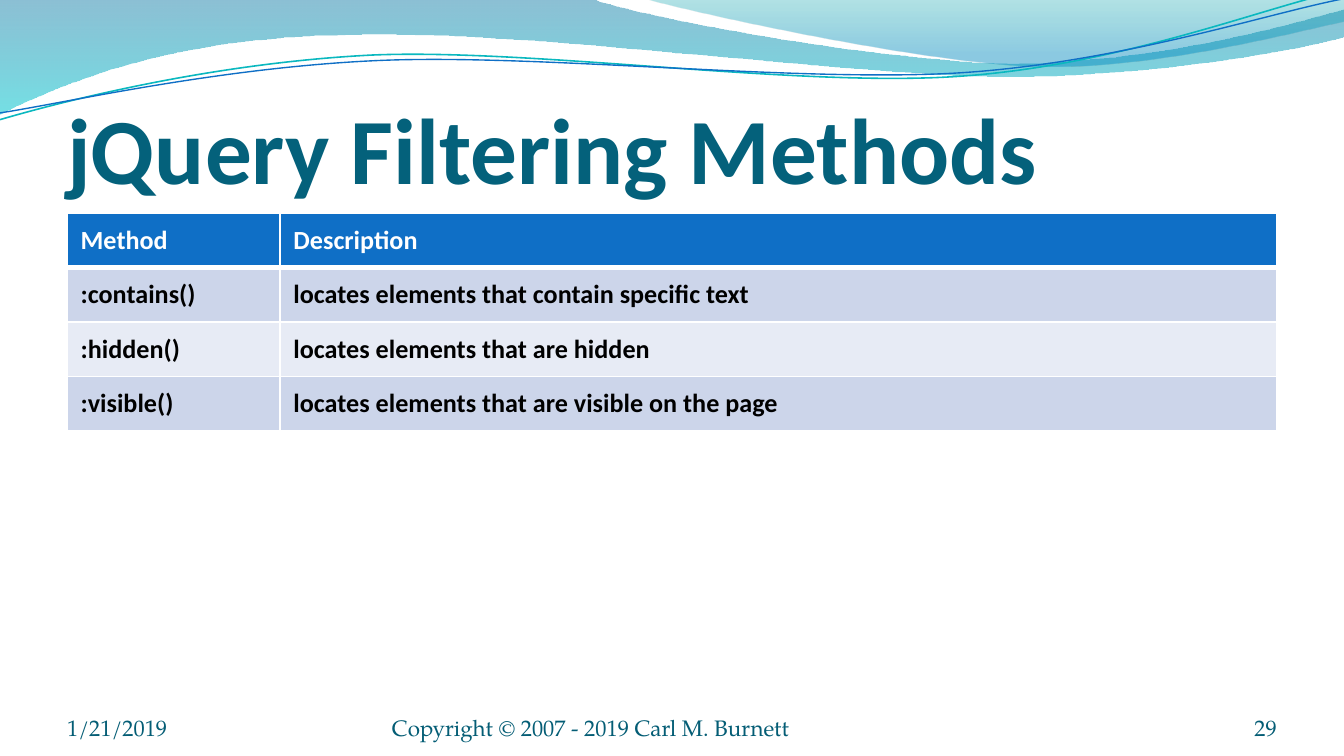
"""Build the jQuery filtering methods slide."""
from lxml import etree
from pptx import Presentation
from pptx.dml.color import RGBColor
from pptx.enum import text
from pptx.oxml import ns
from pptx.util import Pt

COLORS = {
    "title": "04617B", "footer": "045D75", "header": "0F6FC6",
    "odd": "CCD5EA", "even": "E7EBF5", "white": "FFFFFF", "black": "000000",
    "band_top": "0074A1", "band_end": "00C6CF",
    "crest_top": "00A1A9", "crest_end": "008BBF", "teal": "0AB8BF",
}


def write(tf, content, size=14, font="Calibri", color="black", bold=False,
          align="LEFT", anchor="BOTTOM"):
    tf.word_wrap = True
    tf.vertical_anchor = getattr(text.MSO_ANCHOR, anchor)
    p = tf.paragraphs[0]
    p.alignment = getattr(text.PP_ALIGN, align)
    r = p.add_run()
    r.text = content
    r.font.size, r.font.name, r.font.bold = Pt(size), font, bold
    r.font.color.rgb = RGBColor.from_string(COLORS[color])


def draw_wave(slide, start, segments, closed):
    x0, y0 = [round(v * 100) for v in start]
    segments = [[round(v * 100) for v in seg] for seg in segments]
    fb = slide.shapes.build_freeform(x0, y0, scale=Pt(0.01))
    fb.add_line_segments([seg[-2:] for seg in segments], close=closed)
    s = fb.convert_to_shape()
    s.shadow.inherit = False
    origin = next(s._element.iter(ns.qn("a:moveTo")))[0]
    dx, dy = int(origin.get("x")) - x0, int(origin.get("y")) - y0
    for step, seg in zip(list(s._element.iter(ns.qn("a:lnTo"))), segments):
        if len(seg) == 6:
            curve = etree.Element(ns.qn("a:cubicBezTo"))
            for x, y in zip(seg[::2], seg[1::2]):
                etree.SubElement(curve, ns.qn("a:pt"), x=str(x + dx), y=str(y + dy))
            step.getparent().replace(step, curve)
    return s


prs = Presentation()
prs.slide_width, prs.slide_height = Pt(720), Pt(405)
slide = prs.slides.add_slide(prs.slide_layouts[6])

bands = [
    ((0, 0), [(316.8, -0.7), (342.7, 9.4, 478.1, 33.8, 545.8, 33.8),
              (614.2, 33.8, 689.8, 13.7, 720, 5), (720.7, 19.4),
              (707.8, 23.8, 626.4, 41, 537.1, 41),
              (447.8, 40.3, 275, 15.1, 185, 18.7),
              (92.9, 19.4, 33.1, 44.6, -0.7, 61.2), (0, 0)],
     [("band_top", 0, 45), ("band_end", 1, 55)]),
    ((344.9, -0.7), [(366.5, 5.8, 491, 33.1, 553.7, 35.3),
                     (616.3, 37.4, 691.9, 17.3, 720, 11.5),
                     (720, 0), (344.9, -0.7)],
     [("crest_top", 0, 30), ("crest_end", 0.8, 45)]),
]
for start, segments, stops in bands:
    s = draw_wave(slide, start, segments, True)
    s.line.fill.background()
    s.fill.gradient()
    s.fill.gradient_angle = 270
    for stop, (color, position, _) in zip(s.fill.gradient_stops, stops):
        stop.position = position
        stop.color.rgb = RGBColor.from_string(COLORS[color])
    for clr, (_, _, opacity) in zip(s._element.spPr.iter(ns.qn("a:srgbClr")), stops):
        etree.SubElement(clr, ns.qn("a:alpha"), val=str(opacity * 1000))

lines = [
    ((0, 64.1), [(34.6, 54, 113.8, 33.8, 199.4, 29.5),
                 (285.1, 25.9, 426.2, 46.8, 512.6, 41),
                 (599.8, 35.3, 676.1, 4.3, 718.6, -5)], "teal", 0.85),
    ((0, 60.5), [(33.8, 55.4, 118.1, 36, 203.8, 32.4),
                 (290.2, 28.8, 429.8, 44.6, 516.2, 38.9),
                 (601.9, 33.1, 679, 7.2, 720, -0.7)], "header", 0.75),
]
for start, segments, color, width in lines:
    s = draw_wave(slide, start, segments, False)
    s.fill.background()
    s.line.color.rgb = RGBColor.from_string(COLORS[color])
    s.line.width = Pt(width)

footer = dict(size=12, font="TeX Gyre Pagella", color="footer")
boxes = [
    ("jQuery Filtering Methods", 36, 41.5, 648, 67.5,
     dict(size=50, color="title", bold=True)),
    ("1/21/2019", 36, 375.4, 168, 21.6, footer),
    ("Copyright © 2007 - 2019 Carl M. Burnett", 210, 375.4, 264, 21.6, footer),
    ("29", 624, 375.4, 60, 21.6, dict(footer, align="RIGHT")),
]
for content, x, y, w, h, style in boxes:
    tf = slide.shapes.add_textbox(Pt(x), Pt(y), Pt(w), Pt(h)).text_frame
    tf.margin_left = tf.margin_top = tf.margin_right = tf.margin_bottom = 0
    write(tf, content, **style)

rows = [
    ("Method", "Description"),
    (":contains()", "locates elements that contain specific text"),
    (":hidden()", "locates elements that are hidden"),
    (":visible()", "locates elements that are visible on the page"),
]
row_height = 29.2
table = slide.shapes.add_table(len(rows), 2, Pt(36), Pt(114), Pt(648),
                               Pt(row_height * len(rows))).table
for column, width in zip(table.columns, (114, 534)):
    column.width = Pt(width)
for i, row in enumerate(rows):
    table.rows[i].height = Pt(row_height)
    fill = "header" if i == 0 else "odd" if i % 2 else "even"
    for j, content in enumerate(row):
        cell = table.cell(i, j)
        write(cell.text_frame, content, bold=True, color="black" if i else "white")
        cell.vertical_anchor = text.MSO_ANCHOR.MIDDLE
        tcPr = cell._tc.get_or_add_tcPr()
        for side in "LRTB":
            thick = (i, side) in [(0, "B"), (1, "T")]
            ln = etree.SubElement(tcPr, ns.qn(f"a:ln{side}"), w=str(Pt(3 if thick else 1)))
            solid = etree.SubElement(ln, ns.qn("a:solidFill"))
            etree.SubElement(solid, ns.qn("a:srgbClr"), val=COLORS["white"])
        cell.fill.solid()
        cell.fill.fore_color.rgb = RGBColor.from_string(COLORS[fill])

prs.save("out.pptx")
